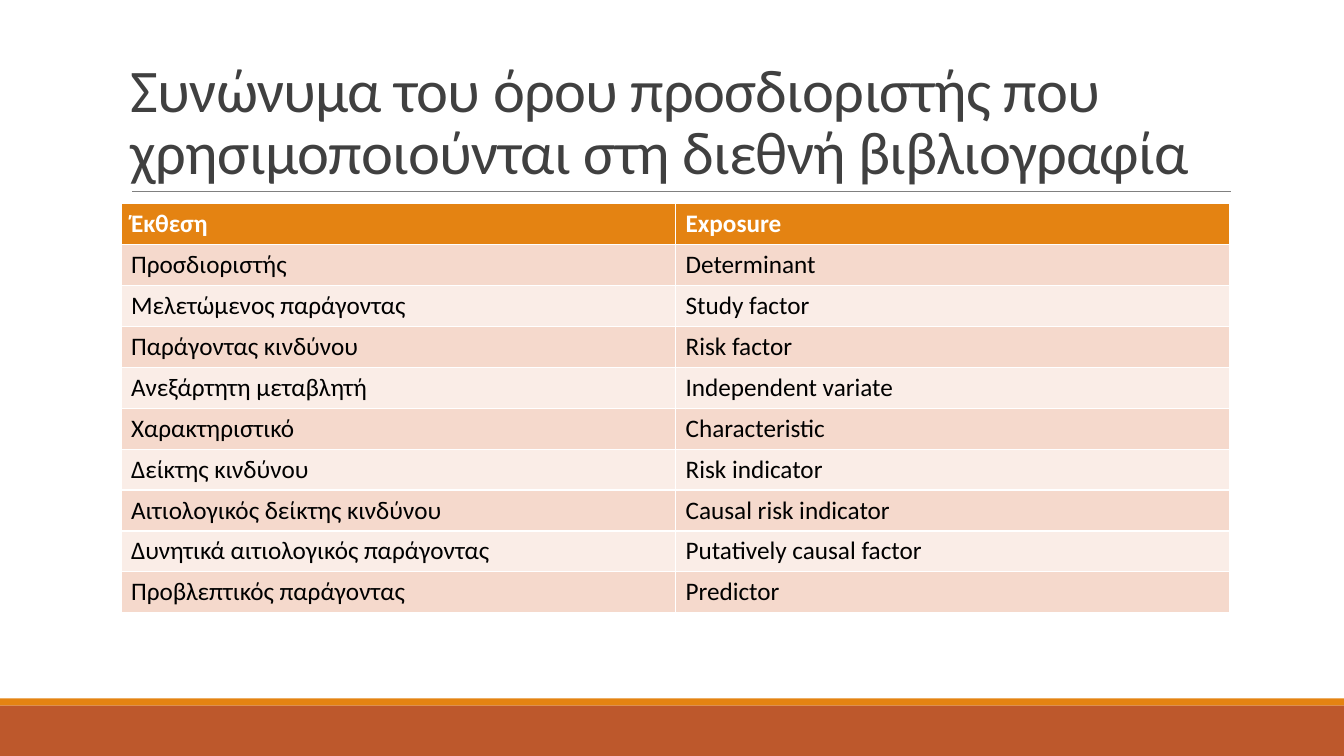
from lxml import etree
from pptx import Presentation
from pptx.dml.color import RGBColor
from pptx.enum.shapes import MSO_CONNECTOR, MSO_SHAPE
from pptx.enum.text import MSO_ANCHOR
from pptx.oxml.ns import qn
from pptx.util import Inches, Pt

RECT = MSO_SHAPE.RECTANGLE
STRAIGHT = MSO_CONNECTOR.STRAIGHT
BOTTOM = MSO_ANCHOR.BOTTOM

FONT = "Calibri"
SLIDE_W, SLIDE_H = 13.33, 7.5
COLORS = {
    "orange": "E48312",
    "rust": "BD582C",
    "rule": "808080",
    "title": "404040",
    "header_text": "FFFFFF",
    "body_text": "000000",
    "band_dark": "F5D9CC",
    "band_light": "FAEDE7",
}
TITLE = "Συνώνυμα του όρου προσδιοριστής που χρησιμοποιούνται στη διεθνή βιβλιογραφία"
TERMS = [
    ("Έκθεση", "Exposure"),
    ("Προσδιοριστής", "Determinant"),
    ("Μελετώμενος παράγοντας", "Study factor"),
    ("Παράγοντας κινδύνου", "Risk factor"),
    ("Ανεξάρτητη μεταβλητή", "Independent variate"),
    ("Χαρακτηριστικό", "Characteristic"),
    ("Δείκτης κινδύνου", "Risk indicator"),
    ("Αιτιολογικός δείκτης κινδύνου", "Causal risk indicator"),
    ("Δυνητικά αιτιολογικός παράγοντας", "Putatively causal factor"),
    ("Προβλεπτικός παράγοντας", "Predictor"),
]


def rgb(name):
    return RGBColor.from_string(COLORS[name])


def format_run(r, size, color, bold=False):
    r.font.name = FONT
    r.font.size = Pt(size)
    r.font.bold = bold
    r.font.color.rgb = rgb(color)


def add_footer(slide, x, y, w, h):
    """Thin orange strip above a rust band."""
    strip_h = 0.07
    bands = [(y, strip_h, "orange"), (y + strip_h, h - strip_h, "rust")]
    for top, height, color in bands:
        sp = slide.shapes.add_shape(
            RECT, Inches(x), Inches(top), Inches(w), Inches(height))
        sp.shadow.inherit = False
        sp.fill.solid()
        sp.fill.fore_color.rgb = rgb(color)
        sp.line.fill.background()


def add_title(slide, x, y, w, h):
    """Bottom-anchored title with a rule under it."""
    # Rule, inset from the box at both ends
    left, right, bottom = Inches(x + 0.11), Inches(x + w + 0.01), Inches(y + h)
    line = slide.shapes.add_connector(STRAIGHT, left, bottom, right, bottom)
    line.line.color.rgb = rgb("rule")
    line.line.width = Pt(0.5)
    etree.SubElement(line._element.spPr, qn("a:effectLst"))

    # Title text
    sp = slide.shapes.add_textbox(Inches(x), Inches(y), Inches(w), Inches(h))
    tf = sp.text_frame
    tf.word_wrap = True
    tf.vertical_anchor = BOTTOM
    tf.text = TITLE
    p = tf.paragraphs[0]
    p.line_spacing = 0.85
    r = p.runs[0]
    format_run(r, 43.2, "title")
    r.font._element.set("spc", "-50")


def add_terms_table(slide, x, y, w, h):
    """Header row over banded rows of Greek and English terms."""
    table = slide.shapes.add_table(
        len(TERMS), len(TERMS[0]),
        Inches(x), Inches(y), Inches(w), Inches(h)).table
    for i, terms in enumerate(TERMS):
        header = i == 0
        band = "band_dark" if i % 2 else "band_light"
        for j, term in enumerate(terms):
            cell = table.cell(i, j)
            cell.fill.solid()
            cell.fill.fore_color.rgb = rgb("orange" if header else band)
            cell.text_frame.text = term
            format_run(cell.text_frame.paragraphs[0].runs[0], 18,
                       "header_text" if header else "body_text", header)


def main():
    prs = Presentation()
    prs.slide_width = Inches(SLIDE_W)
    prs.slide_height = Inches(SLIDE_H)
    slide = prs.slides.add_slide(prs.slide_layouts[6])
    add_footer(slide, 0, 6.93, SLIDE_W, 0.57)
    add_title(slide, 1.2, 0.31, 11, 1.59)
    add_terms_table(slide, 1.2, 2.02, 11, 4.06)
    prs.save("out.pptx")


if __name__ == "__main__":
    main()
